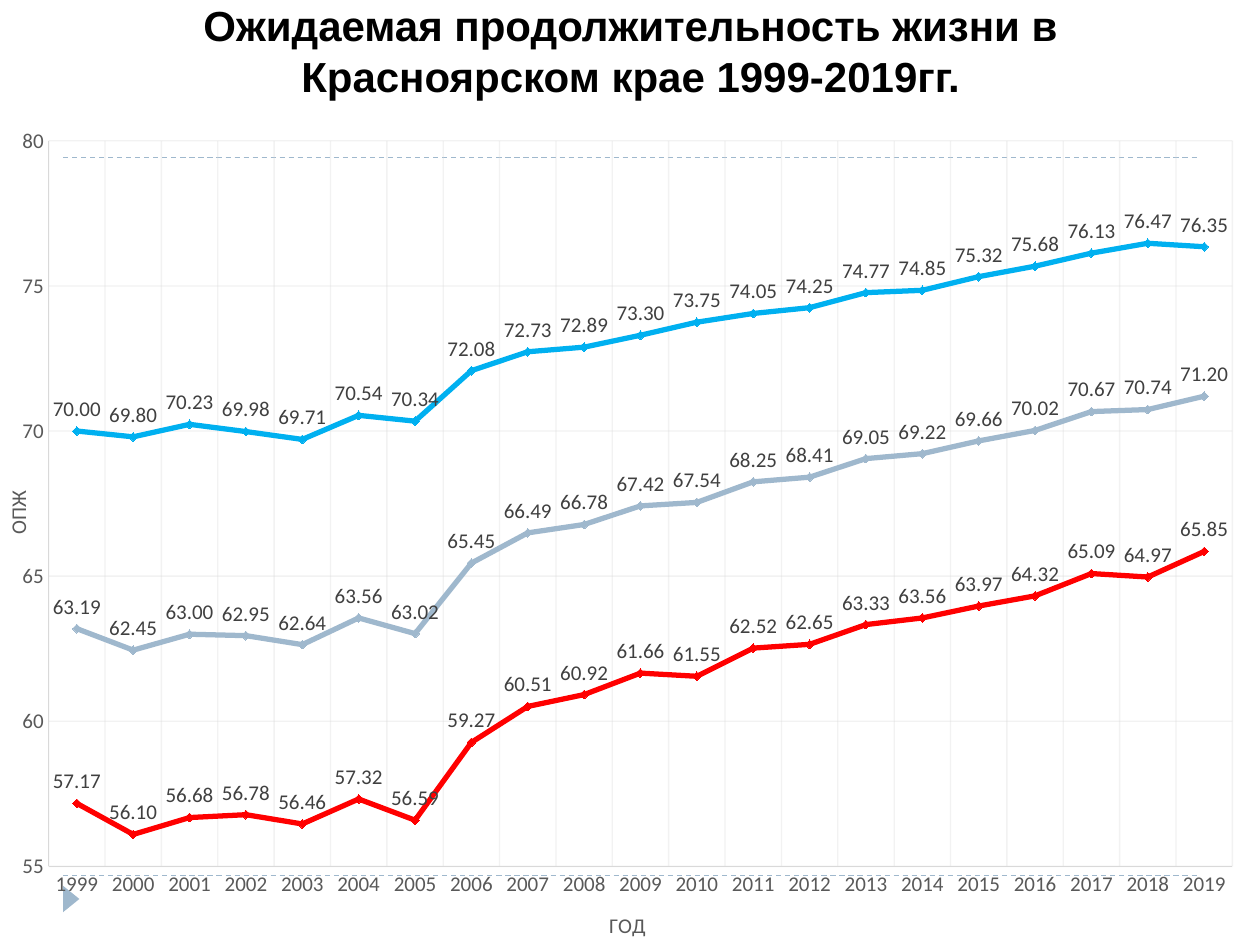
from dataclasses import dataclass

from pptx import Presentation
from pptx.chart.data import CategoryChartData
from pptx.dml.color import RGBColor
from pptx.enum import chart as ch, dml, shapes, text
from pptx.oxml import ns, xmlchemy as xc
from pptx.util import Inches, Pt


@dataclass(frozen=True)
class Theme:
    font: str = "Arial"
    chart_font: str = "Calibri"
    title_size: int = 24
    chart_size: int = 12
    ink: str = "000000"
    axis_text: str = "595959"
    label_text: str = "404040"
    grid: str = "D9D9D9"
    accent: str = "9FB8CD"
    men: str = "FF0000"
    women: str = "00B0F0"


T = Theme()
PLOT = {"x": 0.039, "y": 0.067, "w": 0.949, "h": 0.842}
YEARS = range(1999, 2020)
LIFE_BY_COLOR = {
    T.accent: [63.19, 62.45, 63, 62.95, 62.64, 63.56, 63.02, 65.45, 66.49, 66.78, 67.42,
               67.54, 68.25, 68.41, 69.05, 69.22, 69.66, 70.02, 70.67, 70.74, 71.2],
    T.men: [57.17, 56.1, 56.68, 56.78, 56.46, 57.32, 56.59, 59.27, 60.51, 60.92, 61.66,
            61.55, 62.52, 62.65, 63.33, 63.56, 63.97, 64.32, 65.09, 64.97, 65.85],
    T.women: [70, 69.8, 70.23, 69.98, 69.71, 70.54, 70.34, 72.08, 72.73, 72.89, 73.3,
              73.75, 74.05, 74.25, 74.77, 74.85, 75.32, 75.68, 76.13, 76.47, 76.35],
}


def rgb(color):
    return RGBColor.from_string(color)


def child(parent, tag, **attrs):
    el = xc.OxmlElement(tag)
    for name, value in attrs.items():
        el.set(name, str(value))
    parent.append(el)
    return el


def set_font(font, name=T.chart_font, size=T.chart_size, color=T.axis_text, bold=False):
    font.name, font.size, font.bold = name, Pt(size), bold
    font.color.rgb = rgb(color)


def set_line(line, color, width):
    line.color.rgb = rgb(color)
    line.width = Pt(width)


def add_text(s, content, left, top, width, height, **fmt):
    tf = s.shapes.add_textbox(Inches(left), Inches(top), Inches(width), Inches(height)).text_frame
    tf.word_wrap = True
    tf.vertical_anchor = text.MSO_ANCHOR.MIDDLE
    p = tf.paragraphs[0]
    p.alignment = text.PP_ALIGN.CENTER
    r = p.add_run()
    r.text = content
    set_font(r.font, **fmt)


def add_rule(s, y):
    cn = s.shapes.add_connector(shapes.MSO_CONNECTOR.STRAIGHT,
                                Inches(0.5), Inches(y), Inches(9.5), Inches(y))
    set_line(cn.line, T.accent, 0.75)
    cn.line.dash_style = dml.MSO_LINE.DASH
    child(cn._element.spPr, "a:effectLst")


def add_triangle(s):
    sp = s.shapes.add_shape(shapes.MSO_SHAPE.ISOSCELES_TRIANGLE,
                            Inches(0.46), Inches(7.07), Inches(0.21), Inches(0.13))
    sp.rotation = 90
    sp.shadow.inherit = False
    sp.fill.solid()
    sp.fill.fore_color.rgb = rgb(T.accent)
    sp.line.fill.background()


def style_axis(axis, title):
    axis.major_tick_mark = axis.minor_tick_mark = ch.XL_TICK_MARK.NONE
    set_font(axis.tick_labels.font)
    set_line(axis.format.line, T.grid, 0.25)
    axis.has_major_gridlines = True
    grid = axis.major_gridlines
    set_line(grid.format.line, T.grid, 0.75)
    for clr in axis._element.iterfind(f"{ns.qn('c:majorGridlines')}//{ns.qn('a:srgbClr')}"):
        child(clr, "a:alpha", val=32000)
    tf = axis.axis_title.text_frame
    tf.text = title
    set_font(tf.paragraphs[0].runs[0].font)


def style_series(series, color):
    series.smooth = False
    set_line(series.format.line, color, 3)
    marker = series.marker
    marker.style, marker.size = ch.XL_MARKER_STYLE.DIAMOND, 5
    marker.format.fill.solid()
    marker.format.fill.fore_color.rgb = rgb(color)
    set_line(marker.format.line, color, 0.75)
    labels = series.data_labels
    labels.show_value = True
    labels.position = ch.XL_LABEL_POSITION.ABOVE
    labels.number_format, labels.number_format_is_linked = "#,##0.00", False
    set_font(labels.font, color=T.label_text)


def place_plot(chart):
    area = chart._chartSpace.find(f".//{ns.qn('c:plotArea')}")
    for old in area.findall(ns.qn("c:layout")):
        area.remove(old)
    layout = xc.OxmlElement("c:layout")
    area.insert(0, layout)
    manual = child(layout, "c:manualLayout")
    child(manual, "c:layoutTarget", val="inner")
    for axis in "xy":
        child(manual, f"c:{axis}Mode", val="edge")
    for key, value in PLOT.items():
        child(manual, f"c:{key}", val=value)


def add_life_chart(s):
    data = CategoryChartData()
    data.categories = [str(year) for year in YEARS]
    for values in LIFE_BY_COLOR.values():
        data.add_series("", values)
    chart = s.shapes.add_chart(ch.XL_CHART_TYPE.LINE_MARKERS, Inches(0), Inches(0.66),
                               Inches(9.9), Inches(6.84), data).chart
    chart.has_title = chart.has_legend = False
    set_font(chart.font, color=T.ink)
    chart.plots[0].vary_by_categories = False
    style_axis(chart.category_axis, "ГОД")
    axis = chart.value_axis
    style_axis(axis, "ОПЖ")
    axis.minimum_scale, axis.maximum_scale, axis.major_unit = 55, 80, 5
    axis.tick_labels.number_format = "General"
    axis.tick_labels.number_format_is_linked = False
    body = axis.axis_title._element.find(f".//{ns.qn('a:bodyPr')}")
    body.set("rot", "-5400000")
    body.set("vert", "horz")
    for series, color in zip(chart.plots[0].series, LIFE_BY_COLOR):
        style_series(series, color)
    place_plot(chart)


def main():
    prs = Presentation()
    prs.slide_width, prs.slide_height = Inches(10), Inches(7.5)
    s = prs.slides.add_slide(prs.slide_layouts[6])
    for y in (6.95, 1.25):
        add_rule(s, y)
    add_triangle(s)
    add_text(s, "Ожидаемая продолжительность жизни в Красноярском крае 1999-2019гг.",
             0.8, 0, 8.41, 0.8, name=T.font, size=T.title_size, color=T.ink, bold=True)
    add_life_chart(s)
    prs.save("out.pptx")


if __name__ == "__main__":
    main()
